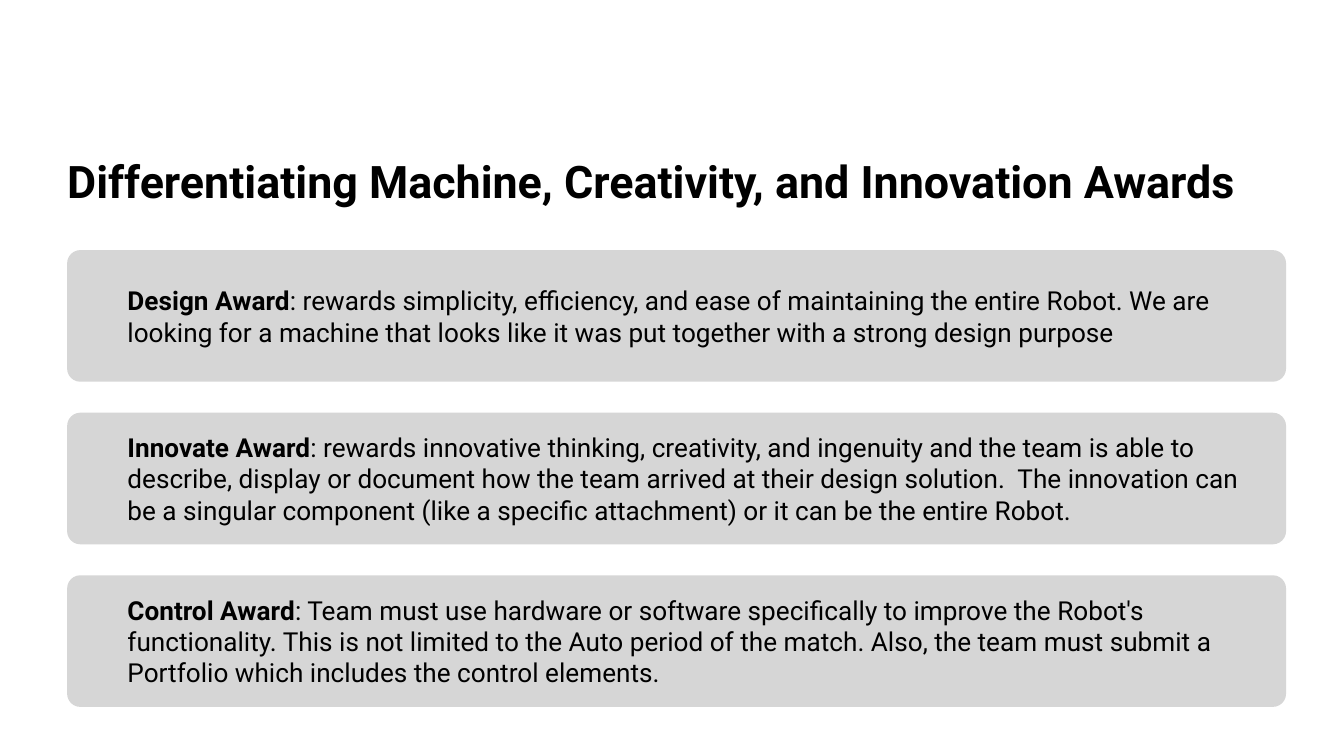
from pptx import Presentation
from pptx.dml.color import RGBColor
from pptx.enum.shapes import MSO_SHAPE
from pptx.enum.text import MSO_ANCHOR
from pptx.util import Pt

LEFT, WIDTH = 36, 653
CARD_TOP, CARD_HEIGHT, CARD_STEP = 134, 70.5, 87.1
INDENT = 25.2

AWARDS = [
    ("Design Award",
     ": rewards simplicity, efficiency, and ease of maintaining the entire Robot. "
     "We are looking for a machine that looks like it was put together with a "
     "strong design purpose"),
    ("Innovate Award",
     ": rewards innovative thinking, creativity, and ingenuity and the team is able "
     "to describe, display or document how the team arrived at their design "
     "solution.  The innovation can be a singular component (like a specific "
     "attachment) or it can be the entire Robot."),
    ("Control Award",
     ": Team must use hardware or software specifically to improve the Robot's "
     "functionality. This is not limited to the Auto period of the match. Also, "
     "the team must submit a Portfolio which includes the control elements."),
]


def color(hex_code):
    return RGBColor.from_string(hex_code)


def add_text(shapes, box, inset, size, runs):
    """Add a middle-anchored text box; runs are (text, bold) pairs."""
    frame = shapes.add_textbox(*map(Pt, box)).text_frame
    frame.word_wrap = True
    frame.vertical_anchor = MSO_ANCHOR.MIDDLE
    for side in ("left", "top", "right", "bottom"):
        setattr(frame, f"margin_{side}", Pt(inset))
    for text, bold in runs:
        run = frame.paragraphs[0].add_run()
        run.text = text
        for name, value in {"name": "Roboto", "size": Pt(size), "bold": bold}.items():
            setattr(run.font, name, value)
        run.font.color.rgb = color("000000")


prs = Presentation()
prs.slide_width, prs.slide_height = Pt(720), Pt(405)
slide = prs.slides.add_slide(prs.slide_layouts[6])

add_text(slide.shapes, (LEFT, 75, WIDTH, 44), 0, 24,
         [("Differentiating Machine, Creativity, and Innovation Awards", True)])

for i, (award, criteria) in enumerate(AWARDS):
    top = CARD_TOP + i * CARD_STEP
    group = slide.shapes.add_group_shape()
    card = group.shapes.add_shape(
        MSO_SHAPE.ROUNDED_RECTANGLE, Pt(LEFT), Pt(top), Pt(WIDTH), Pt(CARD_HEIGHT))
    card.adjustments[0] = 0.1
    card.shadow.inherit = False
    card.fill.solid()
    card.fill.fore_color.rgb = color("D6D6D6")
    card.line.fill.background()
    add_text(group.shapes, (LEFT + INDENT, top, WIDTH - INDENT, CARD_HEIGHT), 7.2, 14,
             [(award, True), (criteria, False)])

prs.save("out.pptx")
